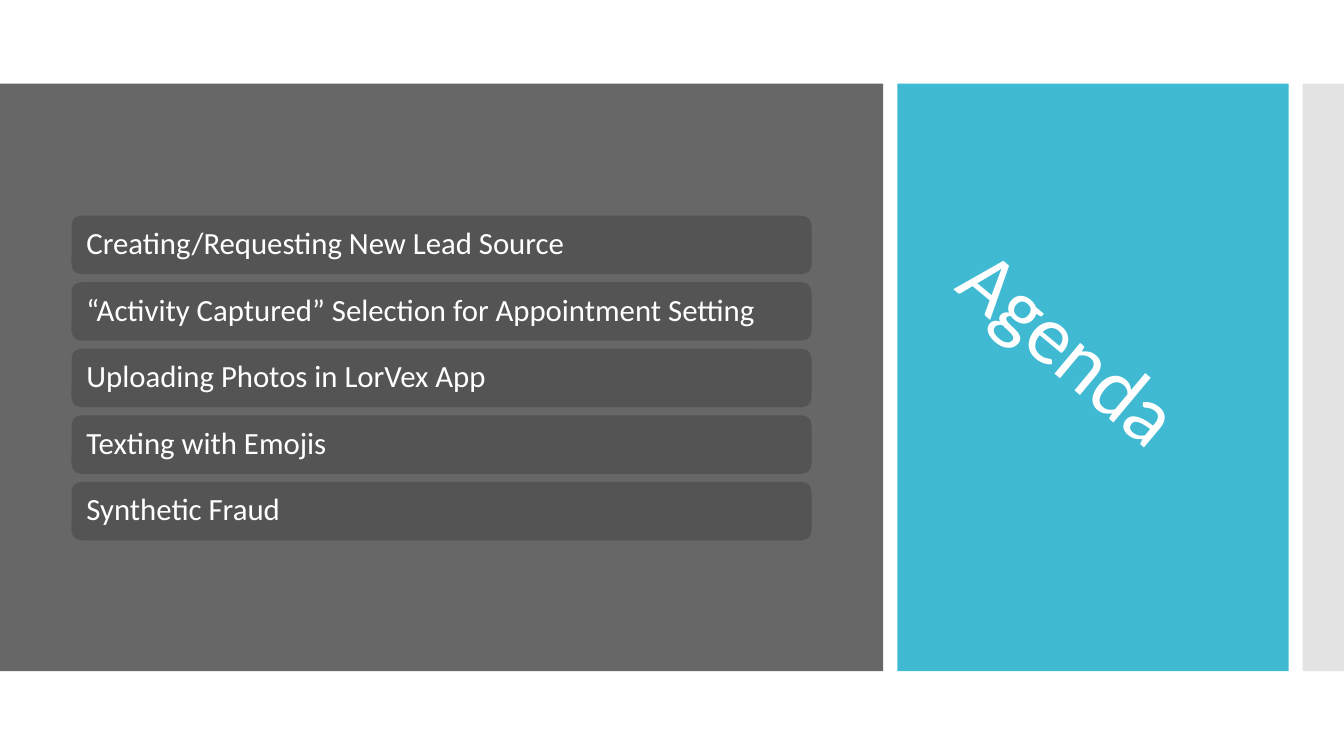
from dataclasses import dataclass

from pptx import Presentation
from pptx.dml.color import RGBColor
from pptx.enum.shapes import MSO_SHAPE
from pptx.enum.text import MSO_ANCHOR, PP_ALIGN
from pptx.oxml.ns import qn
from pptx.shapes.autoshape import Shape
from pptx.slide import Slide
from pptx.text.text import TextFrame
from pptx.util import Inches, Pt
from lxml import etree

RECT = MSO_SHAPE.RECTANGLE
ROUNDED = MSO_SHAPE.ROUNDED_RECTANGLE
MIDDLE = MSO_ANCHOR.MIDDLE
LEFT = PP_ALIGN.LEFT

FONT = "Calibri"
WHITE = "FFFFFF"
ITEM_FILL = "545454"

BAND_TOP, BAND_HEIGHT = 0.83, 5.83
ITEM_LEFT, ITEM_TOP = 0.71, 2.14
ITEM_WIDTH, ITEM_HEIGHT = 7.34, 0.58
ITEM_PITCH = 0.66


@dataclass
class Panel:
    left: float
    width: float
    fill: str
    opacity: int = 100


PANELS = [
    Panel(0, 8.76, "676767"),
    Panel(8.9, 3.88, "40BAD2"),
    Panel(12.92, 0.41, "C8C8C8", opacity=50),
]

AGENDA_ITEMS = [
    "Creating/Requesting New Lead Source",
    "“Activity Captured” Selection for Appointment Setting",
    "Uploading Photos in LorVex App",
    "Texting with Emojis",
    "Synthetic Fraud",
]


def color(value: str) -> RGBColor:
    return RGBColor.from_string(value)


def add_block(slide: Slide, kind: MSO_SHAPE, left: float, top: float,
              width: float, height: float, fill: str) -> Shape:
    """Add a flat filled shape without outline or shadow."""
    block = slide.shapes.add_shape(
        kind, Inches(left), Inches(top), Inches(width), Inches(height))
    block.fill.solid()
    block.fill.fore_color.rgb = color(fill)
    block.line.fill.background()
    block.shadow.inherit = False
    return block


def write_line(frame: TextFrame, text: str, size: int) -> None:
    """Fill the frame with one white, left-aligned, vertically centred line."""
    frame.text = text
    frame.word_wrap = True
    frame.vertical_anchor = MIDDLE
    line = frame.paragraphs[0]
    line.alignment = LEFT
    line.line_spacing = 0.9
    font = line.runs[0].font
    font.name = FONT
    font.size = Pt(size)
    font.color.rgb = color(WHITE)


def add_panel(slide: Slide, panel: Panel) -> None:
    block = add_block(slide, RECT, panel.left, BAND_TOP,
                      panel.width, BAND_HEIGHT, panel.fill)
    if panel.opacity < 100:
        fill_color = block.fill._xPr.find(f".//{qn('a:srgbClr')}")
        alpha = etree.SubElement(fill_color, qn("a:alpha"))
        alpha.set("val", str(panel.opacity * 1000))


def add_title(slide: Slide, text: str) -> None:
    title = slide.shapes.add_textbox(
        Inches(9.18), Inches(3.17), Inches(3.22), Inches(0.92))
    title.rotation = 39.8
    write_line(title.text_frame, text, 60)
    run = title.text_frame.paragraphs[0].runs[0]
    run._r.get_or_add_rPr().set("spc", "-60")


def add_agenda_item(slide: Slide, row: int, text: str) -> None:
    item = add_block(slide, ROUNDED, ITEM_LEFT, ITEM_TOP + row * ITEM_PITCH,
                     ITEM_WIDTH, ITEM_HEIGHT, ITEM_FILL)
    frame = item.text_frame
    frame.margin_left = frame.margin_right = Inches(0.12)
    write_line(frame, text, 22)


def main() -> None:
    presentation = Presentation()
    presentation.slide_width = Inches(13.33)
    presentation.slide_height = Inches(7.5)
    slide = presentation.slides.add_slide(presentation.slide_layouts[6])
    slide.background.fill.solid()
    slide.background.fill.fore_color.rgb = color(WHITE)

    for panel in PANELS:
        add_panel(slide, panel)
    add_title(slide, "Agenda")
    for row, text in enumerate(AGENDA_ITEMS):
        add_agenda_item(slide, row, text)

    presentation.save("out.pptx")


if __name__ == "__main__":
    main()
